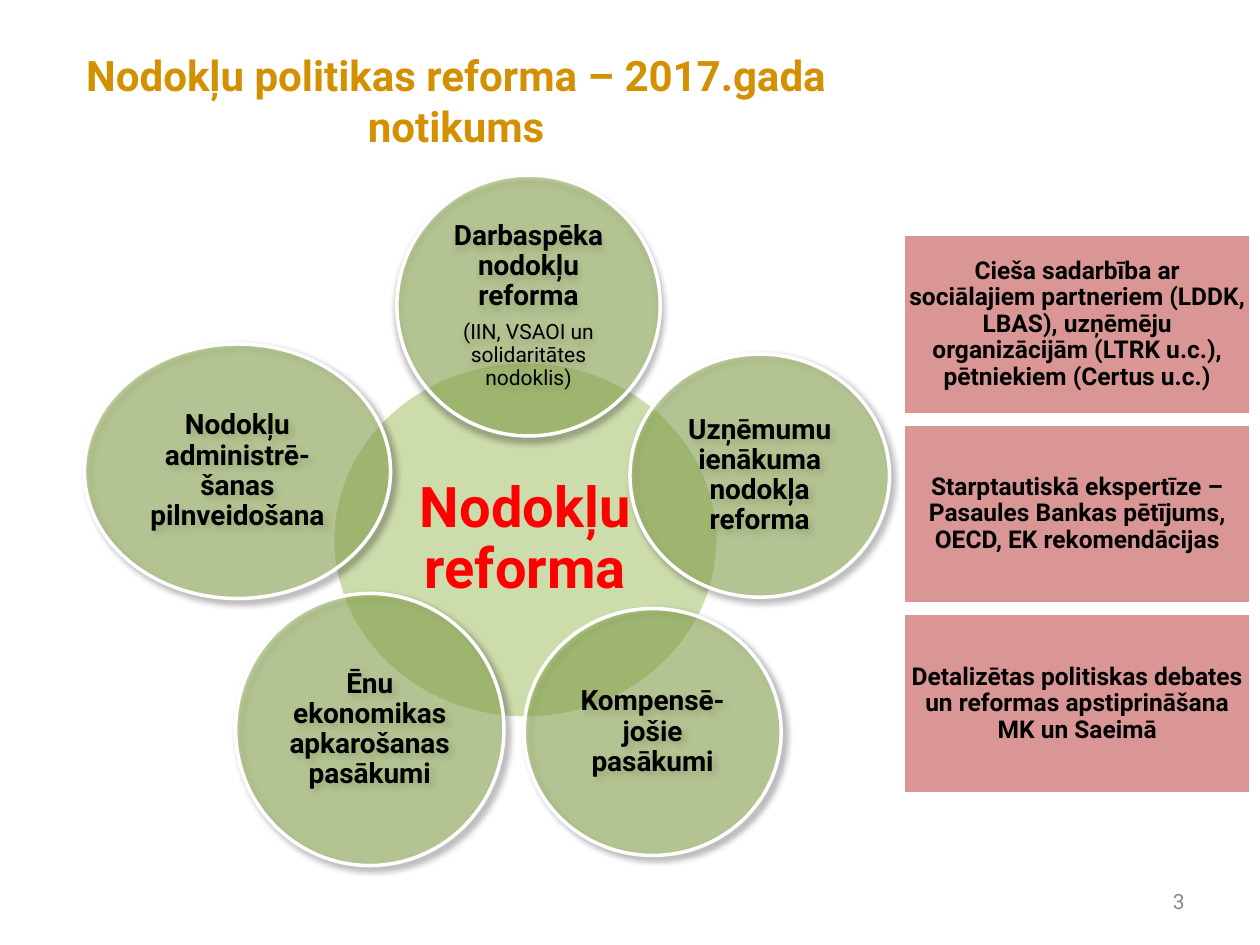
from dataclasses import dataclass

import pptx
import pptx.dml.color
import pptx.enum.shapes
import pptx.enum.text
import pptx.oxml
import pptx.oxml.ns
import pptx.util
from pptx.shapes.autoshape import Shape
from pptx.slide import Slide

RGBColor = pptx.dml.color.RGBColor
SHAPE = pptx.enum.shapes.MSO_SHAPE
ALIGN = pptx.enum.text.PP_ALIGN

GREEN = RGBColor(0x9B, 0xBB, 0x59)
PINK = RGBColor(0xD9, 0x96, 0x94)
GOLD = RGBColor(0xD3, 0x90, 0x01)
RED = RGBColor(0xFF, 0x00, 0x00)
GREY = RGBColor(0x8C, 0x8C, 0x8C)
BLACK = RGBColor(0x00, 0x00, 0x00)
WHITE = RGBColor(0xFF, 0xFF, 0xFF)

FONT = "Roboto"
COLUMNS, ROWS = 100, 75
SLIDE_WIDTH, SLIDE_HEIGHT = pptx.util.Inches(10), pptx.util.Inches(7.5)


@dataclass(frozen=True)
class Area:
    """A rectangle in grid columns and rows."""
    column: float
    row: float
    columns: float
    rows: float

    def lengths(self) -> tuple[int, int, int, int]:
        across, down = SLIDE_WIDTH / COLUMNS, SLIDE_HEIGHT / ROWS
        return (round(self.column * across), round(self.row * down),
                round(self.columns * across), round(self.rows * down))


@dataclass(frozen=True)
class Line:
    """A paragraph with its look."""
    text: str
    size: float = 16
    color: RGBColor = BLACK
    bold: bool = True
    align: ALIGN = ALIGN.CENTER


@dataclass(frozen=True)
class Measure:
    """An outer circle of the reform."""
    area: Area
    lines: tuple[Line, ...]
    shadow_angle: int = 45


CORE = Area(26.4, 28.7, 30.6, 28.3)
MEASURES = (
    Measure(Area(31.5, 13.9, 20.9, 20.7),
            (Line("Darbaspēka nodokļu reforma"),
             Line("(IIN, VSAOI un solidaritātes nodoklis)", 12, bold=False)), 90),
    Measure(Area(50, 28.1, 20.6, 19.3), (Line("Uzņēmumu ienākuma nodokļa reforma"),)),
    Measure(Area(18.7, 47.1, 21.3, 21.6), (Line("Ēnu ekonomikas apkarošanas pasākumi"),)),
    Measure(Area(41.6, 48.3, 20.4, 19.6), (Line("Kompensē-jošie pasākumi"),)),
    Measure(Area(6.7, 27.3, 24.3, 20.2), (Line("Nodokļu administrē-šanas pilnveidošana"),)),
)

FIRST_PANEL = Area(71.7, 18.6, 27.6, 14.3)
PANEL_PITCH = 15.05
PANELS = (
    "Cieša sadarbība ar sociālajiem partneriem (LDDK, LBAS), uzņēmēju "
    "organizācijām (LTRK u.c.), pētniekiem (Certus u.c.)",
    "Starptautiskā ekspertīze – Pasaules Bankas pētījums, OECD, EK rekomendācijas",
    "Detalizētas politiskas debates un reformas apstiprināšana MK un Saeimā",
)


def write(shape: Shape, lines: tuple[Line, ...], inset: float | None = None) -> None:
    """Fill a shape with text; an inset in inches also selects tight spacing."""
    frame = shape.text_frame
    frame.word_wrap = True
    frame.vertical_anchor = pptx.enum.text.MSO_ANCHOR.MIDDLE
    if inset is not None:
        frame.margin_left = frame.margin_right = pptx.util.Inches(inset)
        frame.margin_top = frame.margin_bottom = pptx.util.Inches(inset)
    frame.text = "\n".join(line.text for line in lines)
    for paragraph, line in zip(frame.paragraphs, lines):
        paragraph.alignment = line.align
        if inset is not None:
            paragraph.line_spacing = 0.9
            paragraph.space_after = pptx.util.Pt(round(0.35 * line.size, 1))
        for run in paragraph.runs:
            run.font.name = FONT
            run.font.size = pptx.util.Pt(line.size)
            run.font.bold = line.bold
            run.font.color.rgb = line.color


def add_filled(slide: Slide, kind: SHAPE, area: Area, color: RGBColor) -> Shape:
    """Add a filled shape with a white outline and no shadow."""
    shape = slide.shapes.add_shape(kind, *area.lengths())
    shape.shadow.inherit = False
    shape.fill.solid()
    shape.fill.fore_color.rgb = color
    shape.line.color.rgb = WHITE
    shape.line.width = pptx.util.Pt(2)
    return shape


def add_circle(slide: Slide, area: Area, lines: tuple[Line, ...], inset: float) -> Shape:
    """Add a half-transparent green circle with text."""
    circle = add_filled(slide, SHAPE.OVAL, area, GREEN)
    color = circle.fill._xPr.find(".//" + pptx.oxml.ns.qn("a:srgbClr"))
    color.append(pptx.oxml.parse_xml(
        f'<a:alpha {pptx.oxml.ns.nsdecls("a")} val="50000"/>'))
    write(circle, lines, inset)
    return circle


def cast_shadow(shape: Shape, angle: int) -> None:
    """Put a soft black shadow into the shape's effect list."""
    effects = shape._element.spPr.find(pptx.oxml.ns.qn("a:effectLst"))
    effects.append(pptx.oxml.parse_xml(
        f'<a:outerShdw {pptx.oxml.ns.nsdecls("a")} blurRad="{pptx.util.Pt(4)}" '
        f'dist="{pptx.util.Pt(3)}" dir="{angle * 60000}" rotWithShape="0">'
        '<a:srgbClr val="000000"><a:alpha val="40000"/></a:srgbClr></a:outerShdw>'))


def add_label(slide: Slide, area: Area, line: Line) -> None:
    write(slide.shapes.add_textbox(*area.lengths()), (line,))


def main() -> None:
    deck = pptx.Presentation()
    deck.slide_width, deck.slide_height = SLIDE_WIDTH, SLIDE_HEIGHT
    slide = deck.slides.add_slide(deck.slide_layouts[6])

    # Slide number
    add_label(slide, Area(71.7, 69.5, 23.3, 4),
              Line("3", 12, GREY, bold=False, align=ALIGN.RIGHT))

    # Reform in the centre, its measures around it
    add_circle(slide, CORE, (Line("Nodokļu reforma", 32, RED),), 0.04)
    for measure in MEASURES:
        circle = add_circle(slide, measure.area, measure.lines, 0.02)
        cast_shadow(circle, measure.shadow_angle)

    # Title
    add_label(slide, Area(5.1, 4.4, 62.2, 7.1),
              Line("Nodokļu politikas reforma – 2017.gada notikums", 24, GOLD))

    # Column of supporting steps
    for index, step in enumerate(PANELS):
        area = Area(FIRST_PANEL.column, FIRST_PANEL.row + index * PANEL_PITCH,
                    FIRST_PANEL.columns, FIRST_PANEL.rows)
        panel = add_filled(slide, SHAPE.RECTANGLE, area, PINK)
        write(panel, (Line(step, 14),), 0.04)

    deck.save("out.pptx")


if __name__ == "__main__":
    main()
